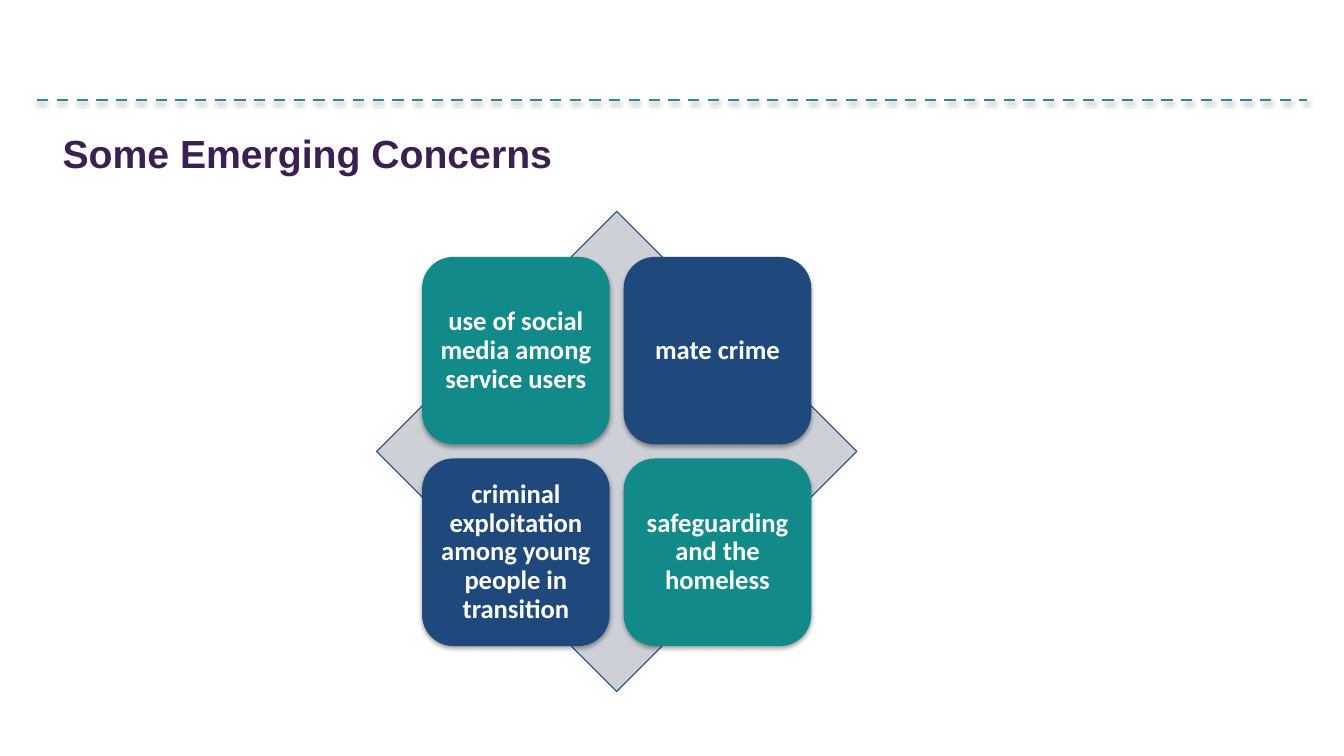
from pptx import Presentation
from pptx.dml.color import RGBColor
from pptx.enum.dml import MSO_LINE
from pptx.enum.shapes import MSO_CONNECTOR, MSO_SHAPE
from pptx.enum.text import MSO_ANCHOR as Anchor, MSO_AUTO_SIZE as AutoSize, PP_ALIGN as Align
from pptx.oxml import parse_xml
from pptx.oxml.ns import nsdecls
from pptx.util import Pt

COLORS = {
    "rule": "31859C",
    "title": "3A2050",
    "diamond": "CDD0D7",
    "teal": "128A8A",
    "navy": "1F497D",
    "white": "FFFFFF",
    "black": "000000",
}


class SlideBuilder:
    """Holds the slide and its style."""

    def __init__(self, slide):
        self.slide = slide
        self.shapes = slide.shapes

    def color(self, name):
        return RGBColor.from_string(COLORS[name])

    def font(self, para, face, size, color):
        para.font.name = face
        para.font.size = Pt(size)
        para.font.bold = True
        para.font.color.rgb = self.color(color)

    def shadow(self, shape, distance, opacity):
        shape._element.spPr.append(parse_xml(
            f'<a:effectLst {nsdecls("a")}>'
            f'<a:outerShdw blurRad="{Pt(3.1)}" dist="{Pt(distance)}" dir="5400000" rotWithShape="0">'
            f'<a:srgbClr val="{COLORS["black"]}"><a:alpha val="{opacity * 1000}"/></a:srgbClr>'
            '</a:outerShdw></a:effectLst>'))

    def dashed_rule(self, left, right, top):
        rule = self.shapes.add_connector(
            MSO_CONNECTOR.STRAIGHT, Pt(left), Pt(top), Pt(right), Pt(top))
        rule.line.color.rgb = self.color("rule")
        rule.line.width = Pt(2)
        rule.line.dash_style = MSO_LINE.DASH
        self.shadow(rule, 1.6, 38)

    def title(self, text, left, top, width, height):
        box = self.shapes.title
        box.left, box.top, box.width, box.height = map(Pt, (left, top, width, height))
        frame = box.text_frame
        frame.text = text
        frame.auto_size = AutoSize.NONE
        frame.vertical_anchor = Anchor.TOP
        para = frame.paragraphs[0]
        para.alignment = Align.LEFT
        self.font(para, "Arial", 28, "title")

    def diamond(self, left, top, size):
        shape = self.shapes.add_shape(
            MSO_SHAPE.DIAMOND, Pt(left), Pt(top), Pt(size), Pt(size))
        shape.shadow.inherit = False
        shape.fill.solid()
        shape.fill.fore_color.rgb = self.color("diamond")
        shape.line.color.rgb = self.color("navy")
        shape.line.width = Pt(0.75)

    def tile(self, text, color, left, top, size):
        shape = self.shapes.add_shape(
            MSO_SHAPE.ROUNDED_RECTANGLE, Pt(left), Pt(top), Pt(size), Pt(size))
        shape.fill.solid()
        shape.fill.fore_color.rgb = self.color(color)
        shape.line.fill.background()
        self.shadow(shape, 1.8, 35)
        frame = shape.text_frame
        frame.word_wrap = True
        frame.vertical_anchor = Anchor.MIDDLE
        frame.margin_left = frame.margin_right = Pt(5.76)
        frame.margin_top = frame.margin_bottom = Pt(5.76)
        frame.text = text
        para = frame.paragraphs[0]
        para.alignment = Align.CENTER
        para.line_spacing = 0.9
        self.font(para, "Calibri", 19, "white")


def main():
    deck = Presentation()
    deck.slide_width, deck.slide_height = Pt(960), Pt(540)
    page = SlideBuilder(deck.slides.add_slide(deck.slide_layouts[5]))

    # Header
    page.dashed_rule(26.6, 933.8, 71.5)
    page.title("Some Emerging Concerns", 37.5, 88.5, 442, 72)

    # Matrix of concerns, centred on the diamond
    left, top, size = 269, 151, 343
    tile_size, gap = 134, 10
    page.diamond(left, top, size)
    inset = (size - 2 * tile_size - gap) / 2
    concerns = [
        ["use of social media among service users", "mate crime"],
        ["criminal exploitation among young people in transition",
         "safeguarding and the homeless"],
    ]
    for row, texts in enumerate(concerns):
        for column, text in enumerate(texts):
            page.tile(text, "teal" if row == column else "navy",
                      left + inset + column * (tile_size + gap),
                      top + inset + row * (tile_size + gap), tile_size)

    deck.save("out.pptx")


if __name__ == "__main__":
    main()
